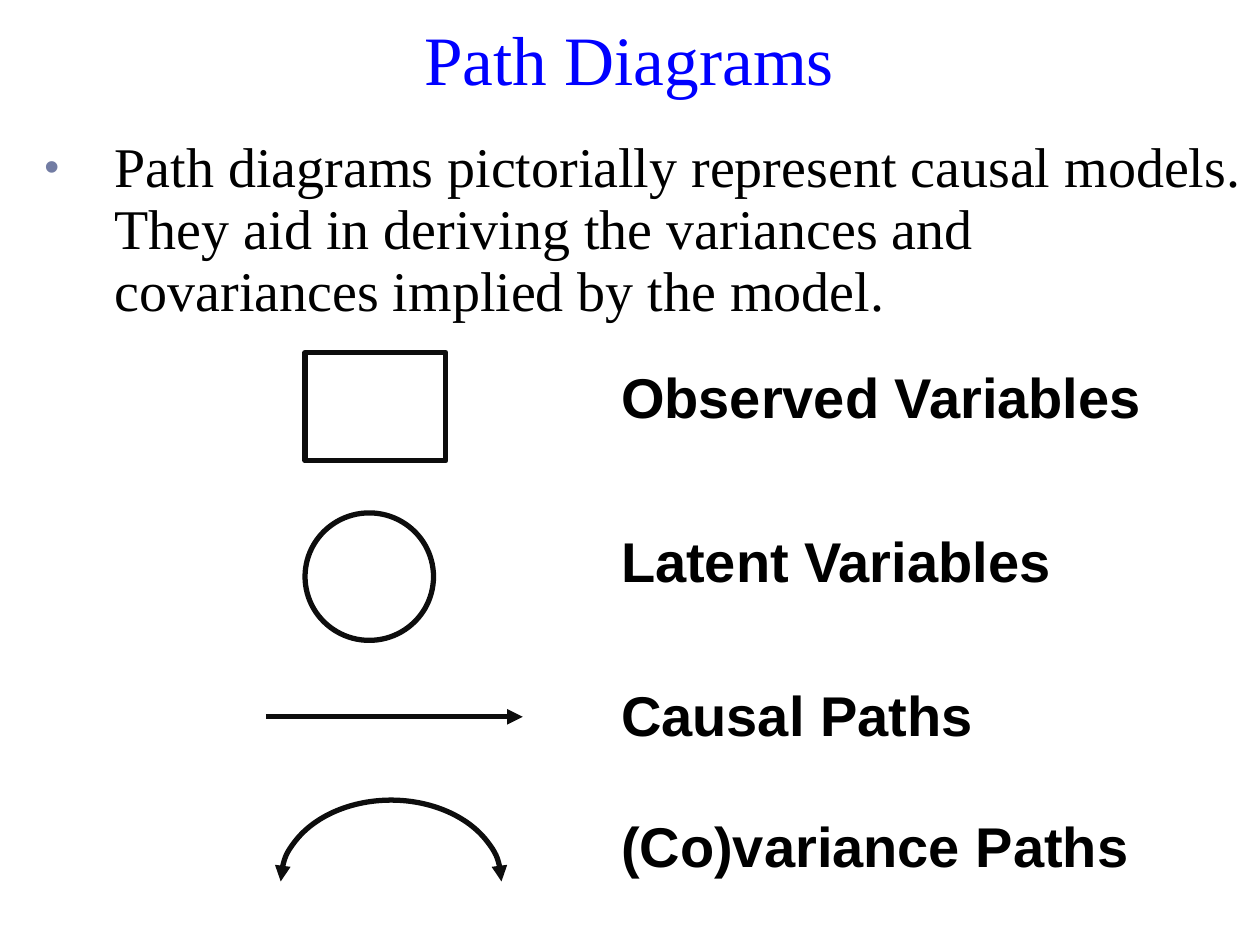
import pptx
import pptx.util
import pptx.dml.color
import pptx.enum.shapes
import pptx.enum.text
import pptx.oxml
import pptx.oxml.ns

Cm = pptx.util.Cm
Pt = pptx.util.Pt
RGB = pptx.dml.color.RGBColor
Kind = pptx.enum.shapes.MSO_SHAPE
Text = pptx.enum.text

BLUE = RGB(0x00, 0x00, 0xFF)
BLACK = RGB(0x00, 0x00, 0x00)
INK = RGB(0x0D, 0x0D, 0x0D)
SLATE = RGB(0x72, 0x7C, 0xA3)

SERIF = "Times New Roman"
HEAD = {"name": SERIF, "size": Pt(39.6), "bold": False}
BODY = {"name": SERIF, "size": Pt(32), "bold": False}
LABEL = {"name": "Arial", "size": Pt(32), "bold": True}

# Label wording and top edge in cm
LABELS = [
    ("Observed Variables", 7.19),
    ("Latent Variables", 10.49),
    ("Causal Paths", 13.59),
    ("(Co)variance Paths", 16.23),
]


def apply(item, form):
    for key, value in form.items():
        setattr(item, key, value)


def place(shape, left, top, width, height):
    apply(shape, {"left": Cm(left), "top": Cm(top),
                  "width": Cm(width), "height": Cm(height)})


def write(shape, words, form, color, frame):
    """Fill a text frame with one formatted paragraph."""
    apply(shape.text_frame, {"word_wrap": True,
                             "auto_size": Text.MSO_AUTO_SIZE.NONE, **frame})
    para = shape.text_frame.paragraphs[0]
    run = para.add_run()
    run.text = words
    apply(run.font, form)
    run.font.color.rgb = color
    return para


def add_xml(parent, tag, **attrs):
    node = pptx.oxml.ns.qn("a:" + tag)
    child = parent.makeelement(node, attrs)
    parent.append(child)
    return child


def bullet(para):
    """Give a paragraph its hanging indent and coloured dot."""
    props = para._p.get_or_add_pPr()
    props.set("marL", str(Cm(1.42)))
    props.set("indent", str(Cm(-1.42)))
    add_xml(add_xml(props, "buClr"), "srgbClr", val=str(SLATE))
    add_xml(props, "buSzPct", val="76000")
    add_xml(props, "buFont", typeface="Arial")
    add_xml(props, "buChar", char="•")


def stroke(shape, *ends):
    """Draw the outline, with arrowheads at the named ends."""
    shape.line.color.rgb = INK
    shape.line.width = Pt(3)
    for end in ends:
        add_xml(shape.line._get_or_add_ln(), end, type="triangle")


def add_form(slide, kind, box, *ends):
    shape = slide.shapes.add_shape(kind, *map(Cm, box))
    shape.shadow.inherit = False
    shape.fill.background()
    stroke(shape, *ends)
    return shape


def add_arrow(slide, left, right, level):
    line = slide.shapes.add_connector(
        pptx.enum.shapes.MSO_CONNECTOR.STRAIGHT,
        Cm(left), Cm(level), Cm(right), Cm(level))
    stroke(line, "tailEnd")
    add_xml(line._element.spPr, "effectLst")


def add_label(slide, words, top):
    box = slide.shapes.add_textbox(Cm(12.27), Cm(top), Cm(11.4), Cm(1.65))
    write(box, words, LABEL, BLACK, {})


def main():
    deck = pptx.Presentation()
    apply(deck, {"slide_width": Cm(25.4), "slide_height": Cm(19.05)})
    slide = deck.slides.add_slide(deck.slide_layouts[1])

    # Title
    title = slide.shapes.title
    place(title, 0.2, 0.41, 24.97, 1.5)
    para = write(title, "Path Diagrams", HEAD, BLUE,
                 {"vertical_anchor": Text.MSO_ANCHOR.MIDDLE})
    para.alignment = Text.PP_ALIGN.CENTER

    # Explanation
    body = slide.placeholders[1]
    place(body, 0.64, 2.54, 24.76, 4.88)
    para = write(body, "Path diagrams pictorially represent causal models. "
                 "They aid in deriving the variances and covariances "
                 "implied by the model.", BODY, BLACK,
                 {"margin_top": Cm(0.25),
                  "vertical_anchor": Text.MSO_ANCHOR.TOP})
    apply(para, {"line_spacing": 0.92, "space_before": Pt(6)})
    bullet(para)

    # Legend labels
    for words, top in LABELS:
        add_label(slide, words, top)

    # Legend symbols
    add_form(slide, Kind.OVAL, (6.15, 10.34, 2.59, 2.57))
    add_form(slide, Kind.RECTANGLE, (6.15, 7.11, 2.84, 2.18))
    add_arrow(slide, 5.36, 10.54, 14.45)
    arc = add_form(slide, Kind.ARC, (5.66, 16.13, 4.45, 3.28),
                   "headEnd", "tailEnd")
    arc.adjustments[0] = 108  # half turn, in units of 100000

    deck.save("out.pptx")


if __name__ == "__main__":
    main()
